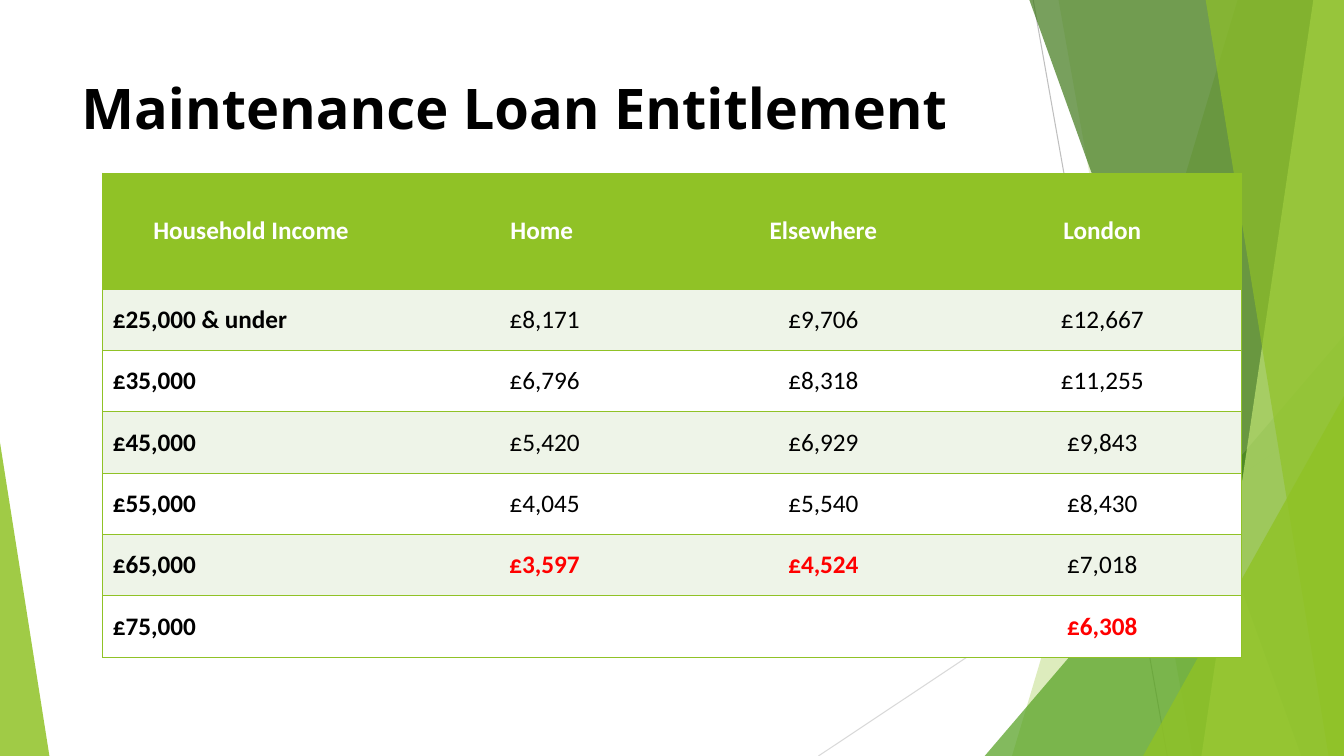
from dataclasses import dataclass

from lxml import etree
from pptx import Presentation
from pptx import util as u
from pptx.dml.color import RGBColor
from pptx.enum import shapes, text
from pptx.oxml.ns import qn

Pt = u.Pt


@dataclass(frozen=True)
class Theme:
    green: str = "90C226"
    mid_green: str = "54A021"
    dark_green: str = "3F7819"
    pale_green: str = "C0E474"
    band: str = "EEF4E8"
    white: str = "FFFFFF"
    black: str = "000000"
    red: str = "FF0000"
    grey: str = "BFBFBF"
    light_grey: str = "D9D9D9"
    title_font: str = "Open Sans"
    table_font: str = "Calibri"
    title_size: int = 40
    table_size: int = 18


T = Theme()
WIDTH, HEIGHT, BLEED = 960, 540, -0.6

HEADER = ["Household Income ", "Home ", "Elsewhere", "London"]
LOANS = [
    ["£25,000 & under", "£8,171", "£9,706", "£12,667"],
    ["£35,000", "£6,796", "£8,318", "£11,255"],
    ["£45,000", "£5,420", "£6,929", "£9,843"],
    ["£55,000", "£4,045", "£5,540", "£8,430"],
    ["£65,000", "£3,597", "£4,524", "£7,018"],
    ["£75,000", "", "", "£6,308"],
]
MINIMUM_LOANS = {"£3,597", "£4,524", "£6,308"}

# Top left, top right, bottom right and bottom left x, then colour and opacity
RIBBONS_BEHIND = [
    (884.2, WIDTH, WIDTH, 722.9, T.green, 30),
    (756, WIDTH, WIDTH, 851.8, T.green, 20),
]
RIBBONS_FRONT = [
    (735.1, WIDTH, WIDTH, 929.5, T.dark_green, 70),
    (938.2, WIDTH, WIDTH, 858.2, T.pale_green, 70),
    (861.1, WIDTH, WIDTH, 949, T.green, 65),
]


def write(tf, content, font, size, color, bold=False,
          align=text.PP_ALIGN.LEFT, line=None, after=None):
    p = tf.paragraphs[0]
    p.alignment, p.line_spacing = align, line
    if after is not None:
        p.space_after = Pt(after)
    r = p.add_run()
    r.text = content
    r.font.name, r.font.size, r.font.bold = font, Pt(size), bold
    r.font.color.rgb = RGBColor.from_string(color)


def paint(sp, color, opacity):
    sp.shadow.inherit = False
    sp.line.fill.background()
    sp.fill.solid()
    sp.fill.fore_color.rgb = RGBColor.from_string(color)
    rgb = next(sp.element.spPr.iter(qn("a:srgbClr")))
    etree.SubElement(rgb, qn("a:alpha"), val=str(opacity * 1000))


def add_hairline(s, x1, y1, x2, y2, color):
    line = s.shapes.add_connector(shapes.MSO_CONNECTOR.STRAIGHT,
                                  Pt(x1), Pt(y1), Pt(x2), Pt(y2))
    line.line.width = Pt(0.75)
    line.line.color.rgb = RGBColor.from_string(color)
    etree.SubElement(line.element.spPr, qn("a:effectLst"))


def add_ribbon(s, top_left, top_right, bottom_right, bottom_left, color, opacity):
    outline = s.shapes.build_freeform(Pt(top_left), Pt(BLEED))
    outline.add_line_segments([(Pt(top_right), Pt(BLEED)),
                               (Pt(bottom_right), Pt(HEIGHT)),
                               (Pt(bottom_left), Pt(HEIGHT))])
    paint(outline.convert_to_shape(), color, opacity)


def add_corner(s, left, top, width, apex, color, opacity):
    """Add a triangle standing on the bottom edge of the slide."""
    sp = s.shapes.add_shape(shapes.MSO_SHAPE.ISOSCELES_TRIANGLE, Pt(left),
                            Pt(top), Pt(width), Pt(HEIGHT - top))
    sp.adjustments[0] = apex
    paint(sp, color, opacity)


def add_backdrop(s):
    add_hairline(s, 738, 0, 833.8, HEIGHT, T.grey)
    add_hairline(s, WIDTH, 290.2, 584.6, HEIGHT, T.light_grey)
    for ribbon in RIBBONS_BEHIND:
        add_ribbon(s, *ribbon)
    add_corner(s, 703.4, 239.8, 256.6, 1, T.mid_green, 72)
    for ribbon in RIBBONS_FRONT:
        add_ribbon(s, *ribbon)
    add_corner(s, 816.5, 283, 143.5, 1, T.green, 80)
    add_corner(s, 0, 316.1, 35.3, 0, T.green, 85)


def set_title(s, content):
    title = s.shapes.title
    title.left, title.top, title.width, title.height = Pt(51), Pt(27.4), Pt(828), Pt(104.4)
    tf = title.text_frame
    tf.auto_size = text.MSO_AUTO_SIZE.NONE
    tf.vertical_anchor = text.MSO_ANCHOR.MIDDLE
    write(tf, content, T.title_font, T.title_size, T.black, bold=True,
          line=0.9, after=6)
    s.shapes.element.append(title.element)


def set_borders(cell, visible):
    tcPr = cell._tc.get_or_add_tcPr()
    for side in ("lnL", "lnR", "lnT", "lnB"):
        ln = etree.SubElement(tcPr, qn(f"a:{side}"), w=str(Pt(1)))
        if side in visible:
            fill = etree.SubElement(ln, qn("a:solidFill"))
            etree.SubElement(fill, qn("a:srgbClr"), val=T.green)
        else:
            etree.SubElement(ln, qn("a:noFill"))


def add_loan_table(s):
    rows = [HEADER] + LOANS
    table = s.shapes.add_table(len(rows), len(HEADER), Pt(73.4), Pt(123.8),
                               Pt(813.6), Pt(345.6)).table
    table.horz_banding = False
    for j, column in enumerate(table.columns):
        column.width = Pt(199.2 if j else 216)
    last = len(HEADER) - 1
    for i, values in enumerate(rows):
        table.rows[i].height = Pt(43.8 if i else 82.8)
        fill = T.green if i == 0 else T.band if i % 2 else T.white
        for j, value in enumerate(values):
            cell = table.cell(i, j)
            sides = {"lnT", "lnB"} | ({"lnL"} if j == 0 else set())
            set_borders(cell, sides | ({"lnR"} if j == last else set()))
            cell.fill.solid()
            cell.fill.fore_color.rgb = RGBColor.from_string(fill)
            cell.vertical_anchor = text.MSO_ANCHOR.MIDDLE
            if not value:
                continue
            minimum = value in MINIMUM_LOANS
            color = T.white if i == 0 else T.red if minimum else T.black
            centred = i == 0 or j > 0
            write(cell.text_frame, value, T.table_font, T.table_size, color,
                  bold=i == 0 or j == 0 or minimum,
                  align=text.PP_ALIGN.CENTER if centred else text.PP_ALIGN.LEFT)


def main():
    prs = Presentation()
    prs.slide_width, prs.slide_height = Pt(WIDTH), Pt(HEIGHT)
    s = prs.slides.add_slide(prs.slide_layouts.get_by_name("Title Only"))
    add_backdrop(s)
    set_title(s, "Maintenance Loan Entitlement")
    add_loan_table(s)
    prs.save("out.pptx")


if __name__ == "__main__":
    main()
